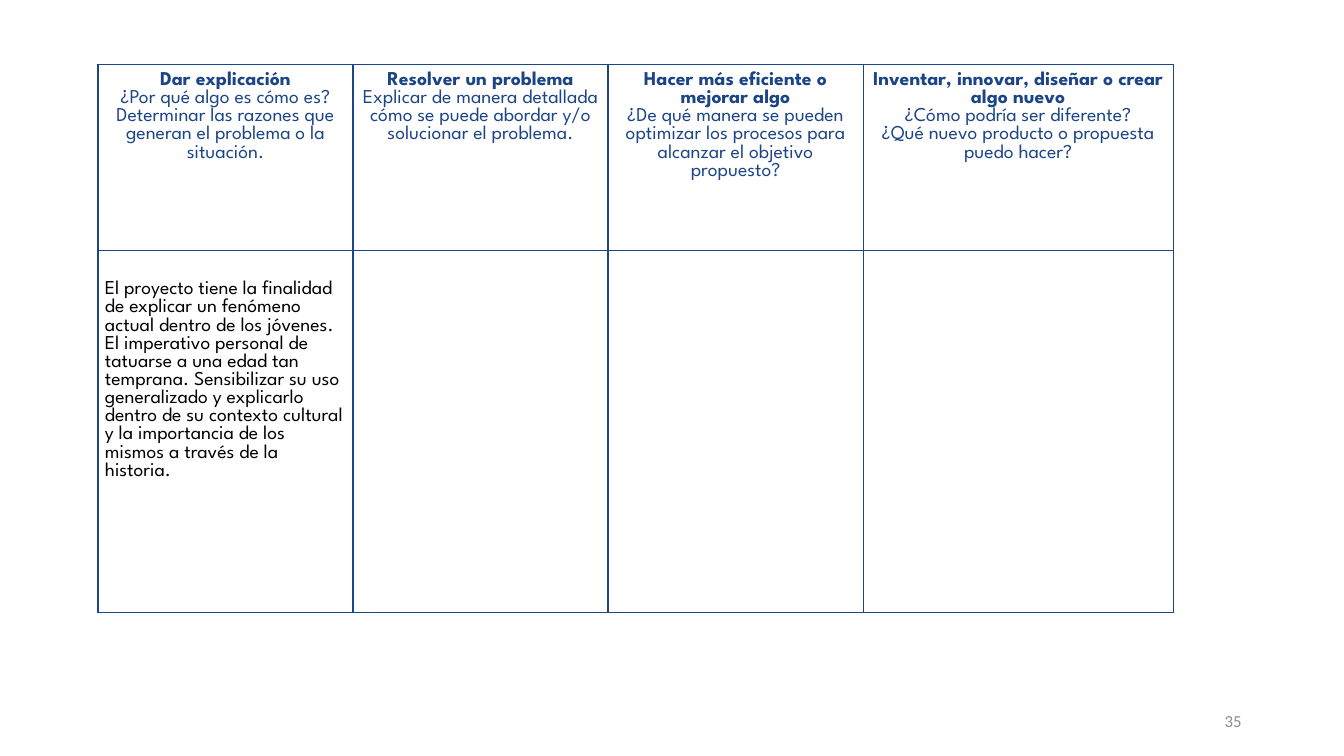
"""Build a slide with a table of four project purposes and one worked example."""
from lxml.etree import SubElement
from pptx import Presentation
from pptx.dml.color import RGBColor
from pptx.enum.text import MSO_ANCHOR as Anchor, PP_ALIGN as Align
from pptx.oxml.ns import qn
from pptx.util import Pt

NAVY = RGBColor(0x1C, 0x45, 0x87)
BLACK = RGBColor(0, 0, 0)
GRAY = RGBColor(0x8C, 0x8C, 0x8C)

PURPOSES = [
    ("Dar explicación", "¿Por qué algo es cómo es?",
     "Determinar las razones que generan el problema o la situación."),
    ("Resolver un problema",
     "Explicar de manera detallada cómo se puede abordar y/o solucionar el problema."),
    ("Hacer más eficiente o mejorar algo",
     "¿De qué manera se pueden optimizar los procesos para alcanzar el objetivo propuesto?"),
    ("Inventar, innovar, diseñar o crear algo nuevo", "¿Cómo podría ser diferente?",
     "¿Qué nuevo producto o propuesta puedo hacer?"),
]
EXAMPLE = (
    "El proyecto tiene la finalidad de explicar un fenómeno actual dentro de los jóvenes. "
    "El imperativo personal de tatuarse a una edad tan temprana. Sensibilizar su uso "
    "generalizado y explicarlo dentro de su contexto cultural y la importancia de los "
    "mismos a través de la historia."
)
COLUMN_WIDTHS = [182.2, 182.2, 182.2, 221.5]
ROW_HEIGHTS = [132.5, 258.7]


def write(paragraph, text, color=NAVY, size=14, font="League Spartan", bold=False,
          align=Align.LEFT):
    paragraph.alignment = align
    run = paragraph.add_run()
    run.text = text
    run.font.name = font
    run.font.size = Pt(size)
    run.font.bold = bold
    run.font.color.rgb = color


def draw_borders(cell):
    properties = cell._tc.get_or_add_tcPr()
    for side in ("lnL", "lnR", "lnT", "lnB"):
        line = SubElement(properties, qn(f"a:{side}"), w=str(Pt(1)))
        fill = SubElement(line, qn("a:solidFill"))
        SubElement(fill, qn("a:srgbClr"), val=str(NAVY))


deck = Presentation()
deck.slide_width, deck.slide_height = Pt(960), Pt(540)
slide = deck.slides.add_slide(deck.slide_layouts[6])

purposes = slide.shapes.add_table(
    len(ROW_HEIGHTS), len(COLUMN_WIDTHS), Pt(70), Pt(46.3),
    Pt(sum(COLUMN_WIDTHS)), Pt(sum(ROW_HEIGHTS))).table
purposes.first_row = purposes.horz_banding = False
for column, width in zip(purposes.columns, COLUMN_WIDTHS):
    column.width = Pt(width)
for row, height in zip(purposes.rows, ROW_HEIGHTS):
    row.height = Pt(height)

for cell in purposes.iter_cells():
    cell.margin_left = cell.margin_right = Pt(5)
    cell.margin_top = cell.margin_bottom = Pt(5)
    draw_borders(cell)
    cell.fill.background()

for column, lines in enumerate(PURPOSES):
    heading = purposes.cell(0, column).text_frame
    for index, line in enumerate(lines):
        paragraph = heading.add_paragraph() if index else heading.paragraphs[0]
        write(paragraph, line, bold=index == 0, align=Align.CENTER)

example = purposes.cell(1, 0)
example.margin_top = Pt(22)
write(example.text_frame.paragraphs[0], EXAMPLE, color=BLACK)

page_number = slide.shapes.add_textbox(Pt(678), Pt(500.5), Pt(216), Pt(28.8)).text_frame
page_number.word_wrap = True
page_number.vertical_anchor = Anchor.MIDDLE
write(page_number.paragraphs[0], "35", color=GRAY, size=12, font="Calibri", align=Align.RIGHT)

deck.save("out.pptx")
